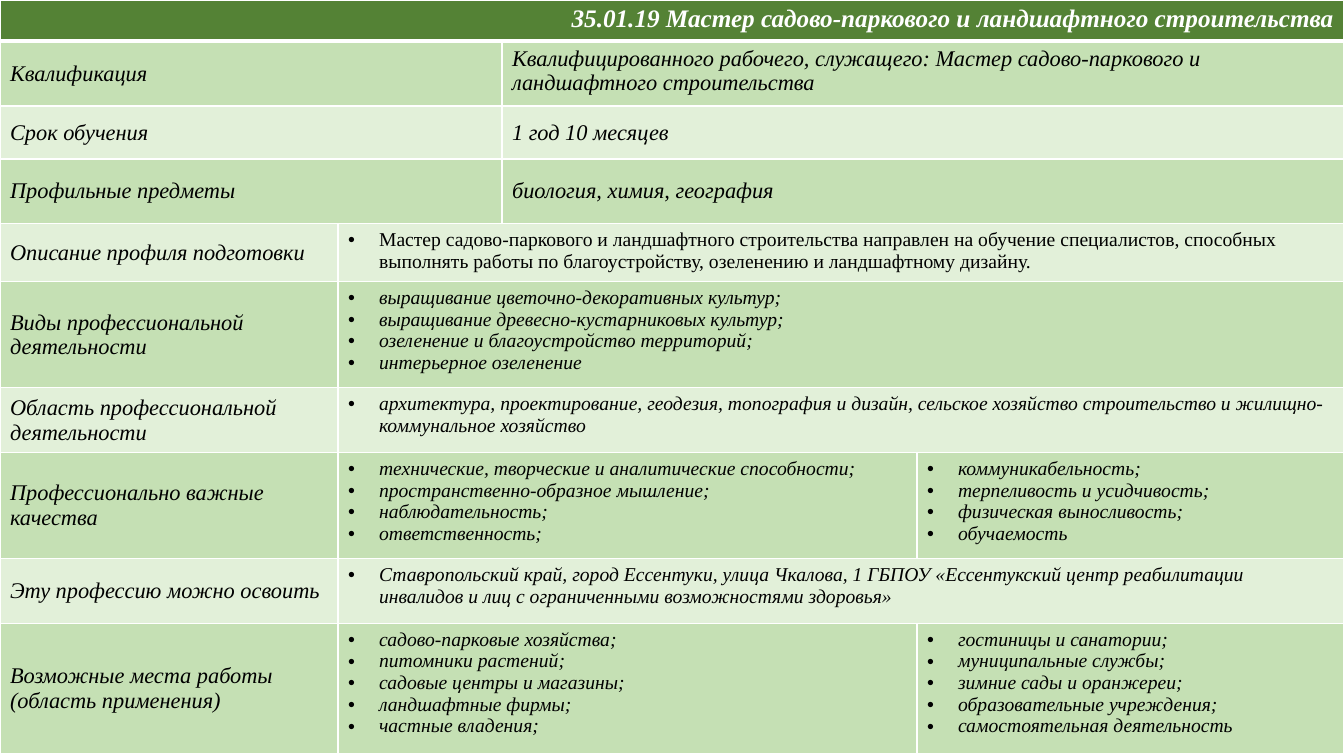
import pptx
import pptx.util
import pptx.dml.color
import pptx.enum.text
import pptx.oxml.ns
from lxml import etree

ALIGN = pptx.enum.text.PP_ALIGN
ANCHOR = pptx.enum.text.MSO_ANCHOR
qn = pptx.oxml.ns.qn

COLORS = {"head": "548235", "dark": "C5E0B4", "light": "E2F0D9",
          "text": "000000", "line": "FFFFFF"}
EMU_PER_PX = 914400 / 100.8

# Text formats
HEAD = {"size": 18, "bold": True, "italic": True}
LABEL = {"size": 16, "bold": False, "italic": True}
ITEM = {"size": 14, "bold": False, "italic": True}
PLAIN = {"size": 14, "bold": False, "italic": False}

COLS = [338, 164, 415, 427]

# Rows: height, then cells of (first column, columns spanned, format, lines)
LABEL_ROWS = [
    (65, "Квалификация",
     "Квалифицированного рабочего, служащего: Мастер садово-паркового и ландшафтного строительства"),
    (53, "Срок обучения", "1 год 10 месяцев"),
    (65, "Профильные предметы", "биология, химия, география"),
]
LIST_ROWS = [
    (58, "Описание профиля подготовки", PLAIN, [
        ["Мастер садово-паркового и ландшафтного строительства направлен на обучение специалистов, "
         "способных выполнять работы по благоустройству, озеленению и ландшафтному дизайну."]]),
    (106, "Виды профессиональной деятельности", ITEM, [
        ["выращивание цветочно-декоративных культур;",
         "выращивание древесно-кустарниковых культур;",
         "озеленение и благоустройство территорий;",
         "интерьерное озеленение"]]),
    (65, "Область профессиональной деятельности", ITEM, [
        ["архитектура, проектирование, геодезия, топография и дизайн, сельское хозяйство "
         "строительство и жилищно-коммунальное хозяйство"]]),
    (106, "Профессионально важные качества", ITEM, [
        ["технические, творческие и аналитические способности;",
         "пространственно-образное мышление;",
         "наблюдательность;",
         "ответственность;"],
        ["коммуникабельность;",
         "терпеливость и усидчивость;",
         "физическая выносливость;",
         "обучаемость"]]),
    (65, "Эту профессию можно освоить", ITEM, [
        ["Ставропольский край, город Ессентуки, улица Чкалова, 1 ГБПОУ «Ессентукский центр "
         "реабилитации инвалидов и лиц с ограниченными возможностями здоровья»"]]),
    (130, "Возможные места работы (область применения)", ITEM, [
        ["садово-парковые хозяйства;",
         "питомники растений;",
         "садовые центры и магазины;",
         "ландшафтные фирмы;",
         "частные владения;"],
        ["гостиницы и санатории;",
         "муниципальные службы;",
         "зимние сады и оранжереи;",
         "образовательные учреждения;",
         "самостоятельная деятельность"]]),
]


def px(n):
    return pptx.util.Emu(round(n * EMU_PER_PX))


def rgb(name):
    return pptx.dml.color.RGBColor.from_string(COLORS[name])


class Sheet:
    font = "Times New Roman"
    indent = 31

    def __init__(self, slide):
        self.s = slide

    def table(self, cols, heights):
        frame = self.s.shapes.add_table(len(heights), len(cols), 0, 0,
                                        px(sum(cols)), px(sum(heights)))
        tbl = frame.table
        for col, width in zip(tbl.columns, cols):
            col.width = px(width)
        for row, height in zip(tbl.rows, heights):
            row.height = px(height)
        return tbl

    def borders(self, cell, top=1, bottom=1):
        tcPr = cell._tc.get_or_add_tcPr()
        for side, width in (("L", 1), ("R", 1), ("T", top), ("B", bottom)):
            ln = etree.SubElement(tcPr, qn("a:ln" + side), w=str(pptx.util.Pt(width)))
            fill = etree.SubElement(ln, qn("a:solidFill"))
            etree.SubElement(fill, qn("a:srgbClr"), val=COLORS["line"])

    def bullet(self, p):
        pPr = p._p.get_or_add_pPr()
        pPr.set("marL", str(px(self.indent)))
        pPr.set("indent", str(-px(self.indent)))
        etree.SubElement(pPr, qn("a:buFont"), typeface="Arial")
        etree.SubElement(pPr, qn("a:buChar"), char="•")

    def text(self, cell, lines, fmt, color="text", anchor=ANCHOR.TOP,
             align=ALIGN.LEFT, bullets=False):
        cell.vertical_anchor = anchor
        tf = cell.text_frame
        for i, line in enumerate(lines):
            p = tf.paragraphs[0] if i == 0 else tf.add_paragraph()
            p.alignment = align
            if bullets:
                self.bullet(p)
            r = p.add_run()
            r.text = line
            for name, value in fmt.items():
                setattr(r.font, name, pptx.util.Pt(value) if name == "size" else value)
            r.font.name = self.font
            r.font.color.rgb = rgb(color)


def main():
    prs = pptx.Presentation()
    prs.slide_width, prs.slide_height = px(1344), px(756)
    sheet = Sheet(prs.slides.add_slide(prs.slide_layouts[6]))

    # Grid with white lines and banded fills
    heights = [41] + [row[0] for row in LABEL_ROWS + LIST_ROWS]
    tbl = sheet.table(COLS, heights)
    last = len(COLS) - 1
    for i in range(len(heights)):
        band = "head" if i == 0 else "dark" if i % 2 else "light"
        for j in range(len(COLS)):
            cell = tbl.cell(i, j)
            sheet.borders(cell, top=3 if i == 1 else 1, bottom=3 if i == 0 else 1)
            cell.fill.solid()
            cell.fill.fore_color.rgb = rgb(band)

    # Heading row
    tbl.cell(0, 0).merge(tbl.cell(0, last))
    sheet.text(tbl.cell(0, 0), ["35.01.19 Мастер садово-паркового и ландшафтного строительства"],
               HEAD, color="line", align=ALIGN.RIGHT)

    # Rows of two halves
    for i, (_, label, value) in enumerate(LABEL_ROWS, 1):
        for j, words in ((0, label), (2, value)):
            tbl.cell(i, j).merge(tbl.cell(i, j + 1))
            anchor = ANCHOR.TOP if (i, j) == (1, 2) else ANCHOR.MIDDLE
            sheet.text(tbl.cell(i, j), [words], LABEL, anchor=anchor)

    # Rows with one or two bulleted lists
    for i, (_, label, fmt, lists) in enumerate(LIST_ROWS, 1 + len(LABEL_ROWS)):
        sheet.text(tbl.cell(i, 0), [label], LABEL, anchor=ANCHOR.MIDDLE)
        tbl.cell(i, 1).merge(tbl.cell(i, last + 1 - len(lists)))
        for j, lines in zip((1, last), lists):
            sheet.text(tbl.cell(i, j), lines, fmt, bullets=True)

    prs.save("out.pptx")


if __name__ == "__main__":
    main()
